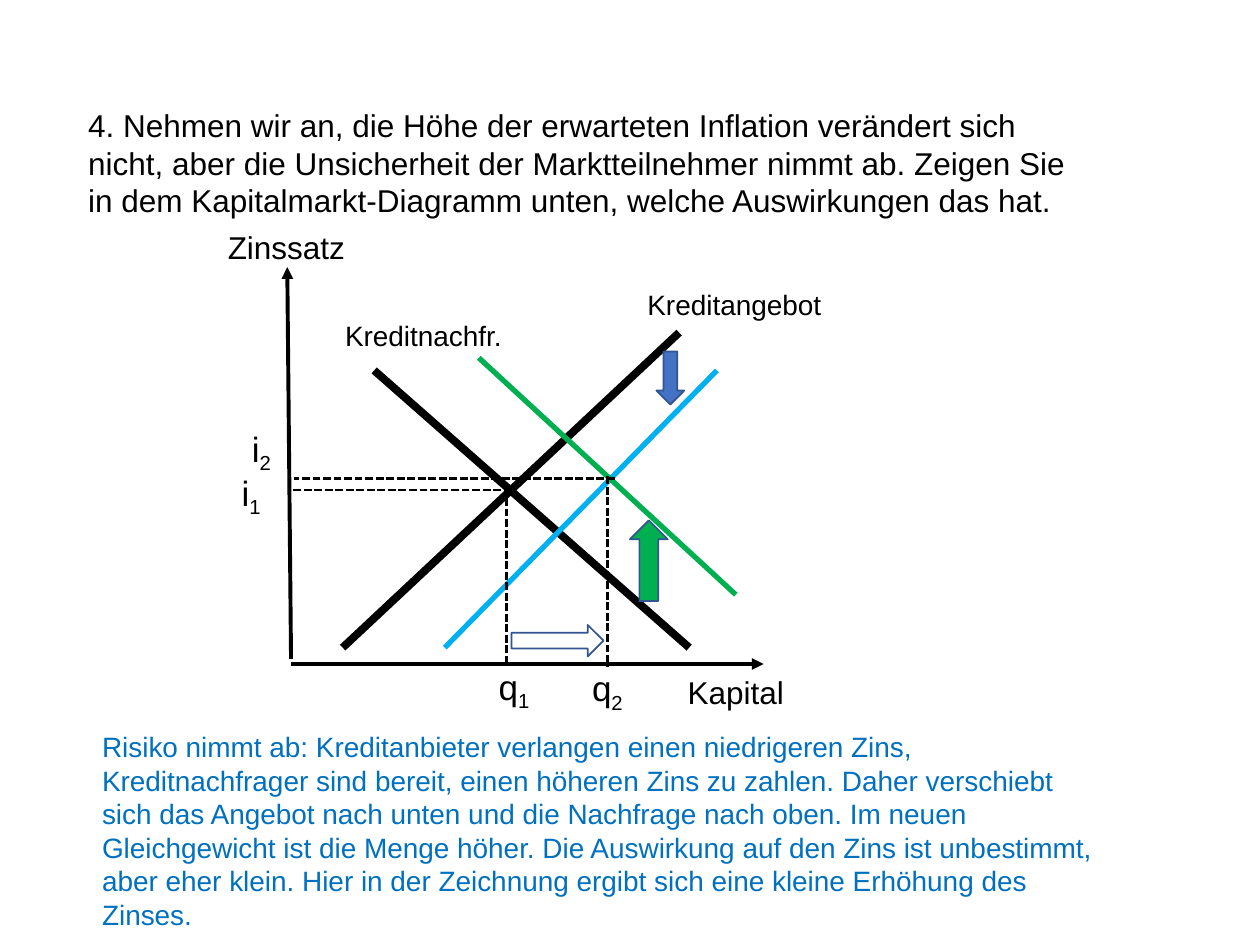
from dataclasses import dataclass

from lxml import etree
from pptx import Presentation
from pptx.dml.color import RGBColor
from pptx.enum import dml, shapes, text
from pptx.oxml import ns
from pptx.util import Emu, Pt

PX = 9144


@dataclass(frozen=True)
class Theme:
    font: str = "Arial"
    ink: str = "000000"
    answer: str = "0070C0"
    supply: str = "00B0F0"
    demand: str = "00B050"
    drop: str = "4472C4"
    paper: str = "FFFFFF"
    outline: str = "325491"
    large: int = 18
    small: int = 16
    symbol: int = 20
    axis: float = 2.25
    curve: float = 4.5
    shifted: float = 3
    guide: float = 1.5


T = Theme()


def px(*values):
    return [Emu(v * PX) for v in values]


def assign(obj, values):
    for name, value in values.items():
        setattr(obj, name, value)


def place(sp, box):
    assign(sp, dict(zip(("left", "top", "width", "height"), px(*box))))


def add_run(p, wording, size, color=T.ink, base=None):
    r = p.add_run()
    r.text = wording
    assign(r.font, {"name": T.font, "size": Pt(size), "bold": False})
    r.font.color.rgb = RGBColor.from_string(color)
    if base:
        r.font._element.set("baseline", str(base))


def fill_paragraph(sp, box, wording, size, color):
    place(sp, box)
    tf = sp.text_frame
    assign(tf, {"word_wrap": True, "auto_size": text.MSO_AUTO_SIZE.NONE,
                "vertical_anchor": text.MSO_ANCHOR.TOP})
    p = tf.paragraphs[0]
    assign(p, {"alignment": text.PP_ALIGN.LEFT, "space_before": Pt(0), "line_spacing": 1.0})
    pPr = p._p.get_or_add_pPr()
    for name in ("marL", "indent"):
        pPr.set(name, "0")
    etree.SubElement(pPr, ns.qn("a:buNone"))
    add_run(p, wording, size, color)


def add_line(s, origin, ends, color, width, dashed=False, arrow=False):
    x, y = origin
    x1, y1, x2, y2 = ends
    sp = s.shapes.add_connector(shapes.MSO_CONNECTOR.STRAIGHT,
                                *px(x + x1, y + y1, x + x2, y + y2))
    sp.line.width = Pt(width)
    sp.line.color.rgb = RGBColor.from_string(color)
    if dashed:
        sp.line.dash_style = dml.MSO_LINE.SQUARE_DOT
    if arrow:
        etree.SubElement(sp.line._get_or_add_ln(), ns.qn("a:tailEnd"), type="triangle")
    etree.SubElement(sp._element.spPr, ns.qn("a:effectLst"))


def add_label(s, origin, box, wording, size, index=""):
    x, y = origin
    left, top, width, height = box
    sp = s.shapes.add_textbox(*px(x + left, y + top, width, height))
    sp.text_frame.word_wrap = False
    p = sp.text_frame.paragraphs[0]
    add_run(p, wording, size)
    if index:
        add_run(p, index, size, base=-25000)


def add_arrow(s, origin, box, color, rotation):
    x, y = origin
    left, top, width, height = box
    sp = s.shapes.add_shape(shapes.MSO_SHAPE.RIGHT_ARROW,
                            *px(x + left, y + top, width, height))
    sp.rotation = rotation
    sp.shadow.inherit = False
    sp.fill.solid()
    sp.fill.fore_color.rgb = RGBColor.from_string(color)
    sp.line.color.rgb = RGBColor.from_string(T.outline)
    sp.line.width = Pt(1)


def draw_diagram(s, origin):
    for ends in ((60, 347, 57, 36), (60, 351, 435, 351)):
        add_line(s, origin, ends, T.ink, T.axis, arrow=True)
    for ends, color, width in (
        ((368, 88, 101, 338), T.ink, T.curve),
        ((126, 118, 376, 338), T.ink, T.curve),
        ((398, 118, 182, 338), T.supply, T.shifted),
        ((209, 108, 413, 296), T.demand, T.shifted),
    ):
        add_line(s, origin, ends, color, width)
    for ends in ((235, 213, 60, 213), (231, 211, 231, 350),
                 (317, 204, 62, 204), (311, 202, 311, 353)):
        add_line(s, origin, ends, T.ink, T.guide, dashed=True)
    for box, *label in (
        ((0, 0, 114, 40), "Zinssatz", T.large),
        ((365, 353, 97, 40), "Kapital", T.large),
        ((333, 47, 160, 37), "Kreditangebot", T.small),
        ((93, 72, 146, 37), "Kreditnachfr.", T.small),
        ((11, 193, 36, 43), "i", T.symbol, "1"),
        ((19, 158, 37, 44), "i", T.symbol, "2"),
        ((215, 347, 49, 44), "q", T.symbol, "1"),
        ((289, 348, 49, 44), "q", T.symbol, "2"),
    ):
        add_label(s, origin, box, *label)
    for box, color, rotation in (
        ((340, 113, 42, 22), T.drop, 90),
        ((312, 254, 64, 30), T.demand, 270),
        ((235, 320, 73, 25), T.paper, 0),
    ):
        add_arrow(s, origin, box, color, rotation)


def main():
    prs = Presentation()
    prs.slide_width, prs.slide_height = px(1000, 750)
    s = prs.slides.add_slide(prs.slide_layouts[1])
    question = (
        "4. Nehmen wir an, die Höhe der erwarteten Inflation verändert sich nicht, "
        "aber die Unsicherheit der Marktteilnehmer nimmt ab. Zeigen Sie in dem "
        "Kapitalmarkt-Diagramm unten, welche Auswirkungen das hat."
    )
    answer = (
        "Risiko nimmt ab: Kreditanbieter verlangen einen niedrigeren Zins, "
        "Kreditnachfrager sind bereit, einen höheren Zins zu zahlen. Daher verschiebt "
        "sich das Angebot nach unten und die Nachfrage nach oben. Im neuen "
        "Gleichgewicht ist die Menge höher. Die Auswirkung auf den Zins ist "
        "unbestimmt, aber eher klein. Hier in der Zeichnung ergibt sich eine kleine "
        "Erhöhung des Zinses."
    )
    fill_paragraph(s.shapes.title, (60, 79, 815, 101), question, T.large, T.ink)
    fill_paragraph(s.placeholders[1], (71, 574, 815, 172), answer, T.small, T.answer)
    draw_diagram(s, (171, 176))
    prs.save("out.pptx")


if __name__ == "__main__":
    main()
